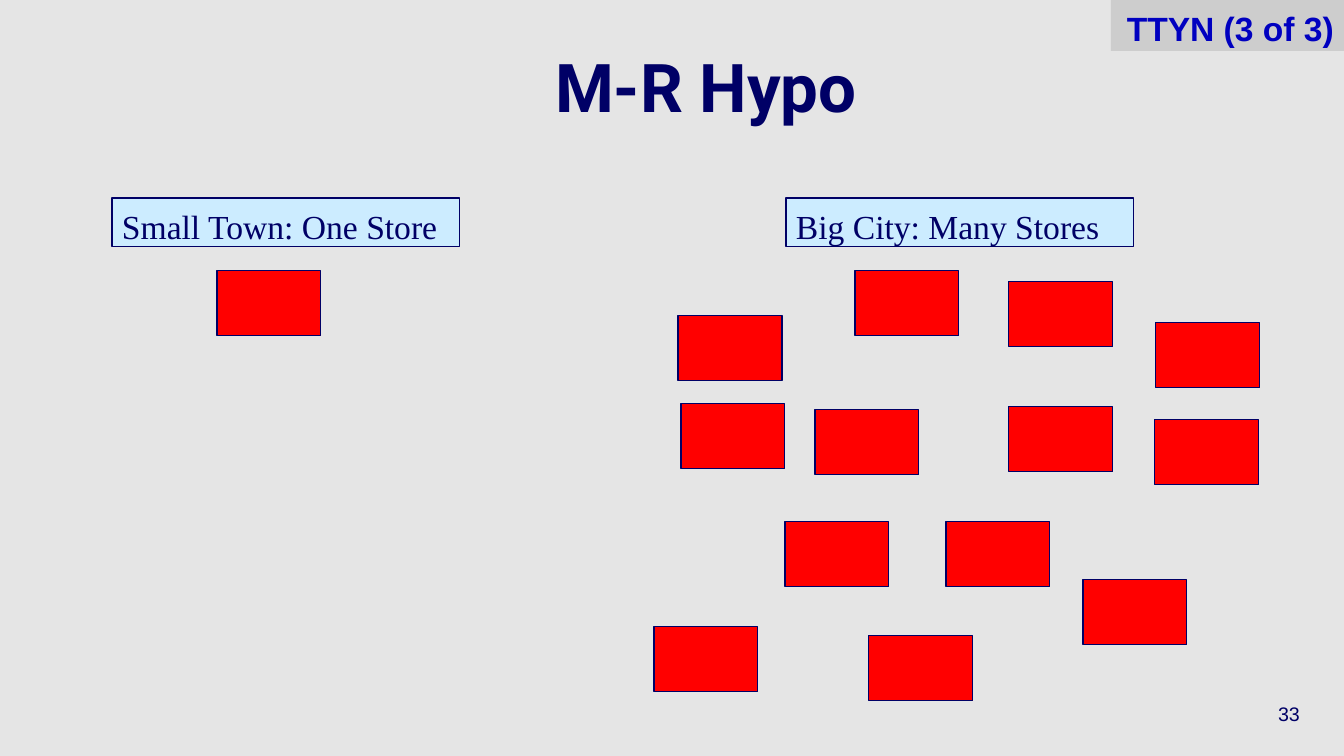
from pptx import Presentation
from pptx.dml.color import RGBColor
from pptx.enum.shapes import MSO_SHAPE
from pptx.enum.text import MSO_ANCHOR, MSO_AUTO_SIZE, PP_ALIGN
from pptx.util import Pt

RECT = MSO_SHAPE.RECTANGLE
TOP, MIDDLE = MSO_ANCHOR.TOP, MSO_ANCHOR.MIDDLE
LEFT, CENTER, RIGHT = PP_ALIGN.LEFT, PP_ALIGN.CENTER, PP_ALIGN.RIGHT
NO_FIT = MSO_AUTO_SIZE.NONE

SCALE = 914400 / 100.8
WIDE, HIGH = 1344, 756
TITLE_ONLY = 5
STORE_W, STORE_H = 104, 65
COLORS = {
    "back": "E5E5E5",
    "tag": "CDCDCD",
    "navy": "000066",
    "blue": "0000C0",
    "label": "CCECFF",
    "store": "FF0000",
}

TOWN = [(217, 271)]
CITY = [
    (855, 271), (1009, 282), (869, 636), (654, 627), (678, 316),
    (1009, 407), (815, 410), (946, 522), (681, 404), (1155, 420),
    (1156, 323), (1083, 580), (785, 522),
]


def px(n):
    return round(n * SCALE)


def rgb(name):
    return RGBColor.from_string(COLORS[name])


class Deck:
    def __init__(self):
        self.prs = Presentation()
        self.prs.slide_width, self.prs.slide_height = px(WIDE), px(HIGH)
        self.slide = self.prs.slides.add_slide(self.prs.slide_layouts[TITLE_ONLY])
        fill = self.slide.background.fill
        fill.solid()
        fill.fore_color.rgb = rgb("back")

    def words(self, shape, text, size, face, color="navy", bold=False,
              align=LEFT, anchor=MIDDLE, inset=5):
        """Fill a shape with one styled run; inset is the top margin in px."""
        frame = shape.text_frame
        frame.word_wrap = True
        frame.auto_size = NO_FIT
        frame.vertical_anchor = anchor
        frame.margin_left = frame.margin_right = px(10)
        frame.margin_top, frame.margin_bottom = px(inset), px(5)
        para = frame.paragraphs[0]
        para.alignment = align
        run = para.add_run()
        run.text = text
        font = run.font
        font.size, font.name, font.bold = Pt(size), face, bold
        font.color.rgb = rgb(color)
        return para

    def title(self, text, x, y, w, h):
        shape = self.slide.shapes.title
        shape.left, shape.top, shape.width, shape.height = map(px, (x, y, w, h))
        para = self.words(shape, text, 48, "Roboto", bold=True, align=CENTER)
        para.line_spacing = 0.7
        para.space_after = Pt(3)

    def rect(self, x, y, w, h, fill, line=None):
        shape = self.slide.shapes.add_shape(RECT, *map(px, (x, y, w, h)))
        shape.shadow.inherit = False
        shape.fill.solid()
        shape.fill.fore_color.rgb = rgb(fill)
        if line:
            shape.line.color.rgb = rgb(line)
            shape.line.width = Pt(0.75)
        else:
            shape.line.fill.background()
        return shape

    def tag(self, text, x, y, w, h):
        self.words(self.rect(x, y, w, h, "tag"), text, 24, "Arial", "blue",
                   bold=True, align=RIGHT, anchor=TOP, inset=8)

    def label(self, text, x, y, w=348, h=49):
        self.words(self.rect(x, y, w, h, "label", "navy"), text, 24,
                   "Times New Roman", anchor=TOP, inset=8)

    def stores(self, spots):
        for x, y in spots:
            self.rect(x, y, STORE_W, STORE_H, "store", "navy")

    def number(self, text, x, y, w, h):
        box = self.slide.shapes.add_textbox(*map(px, (x, y, w, h)))
        self.words(box, text, 14, "Arial", align=RIGHT)


def main():
    deck = Deck()
    deck.number("33", 1030, 689, 280, 50)
    deck.title("M-R Hypo", 90, 33, 1232, 126)
    deck.tag("TTYN (3 of 3)", 1111, 0, 233, 51)
    deck.label("Small Town: One Store", 112, 198)
    deck.stores(TOWN)
    deck.label("Big City: Many Stores", 786, 198)
    deck.stores(CITY)
    deck.prs.save("out.pptx")


if __name__ == "__main__":
    main()
